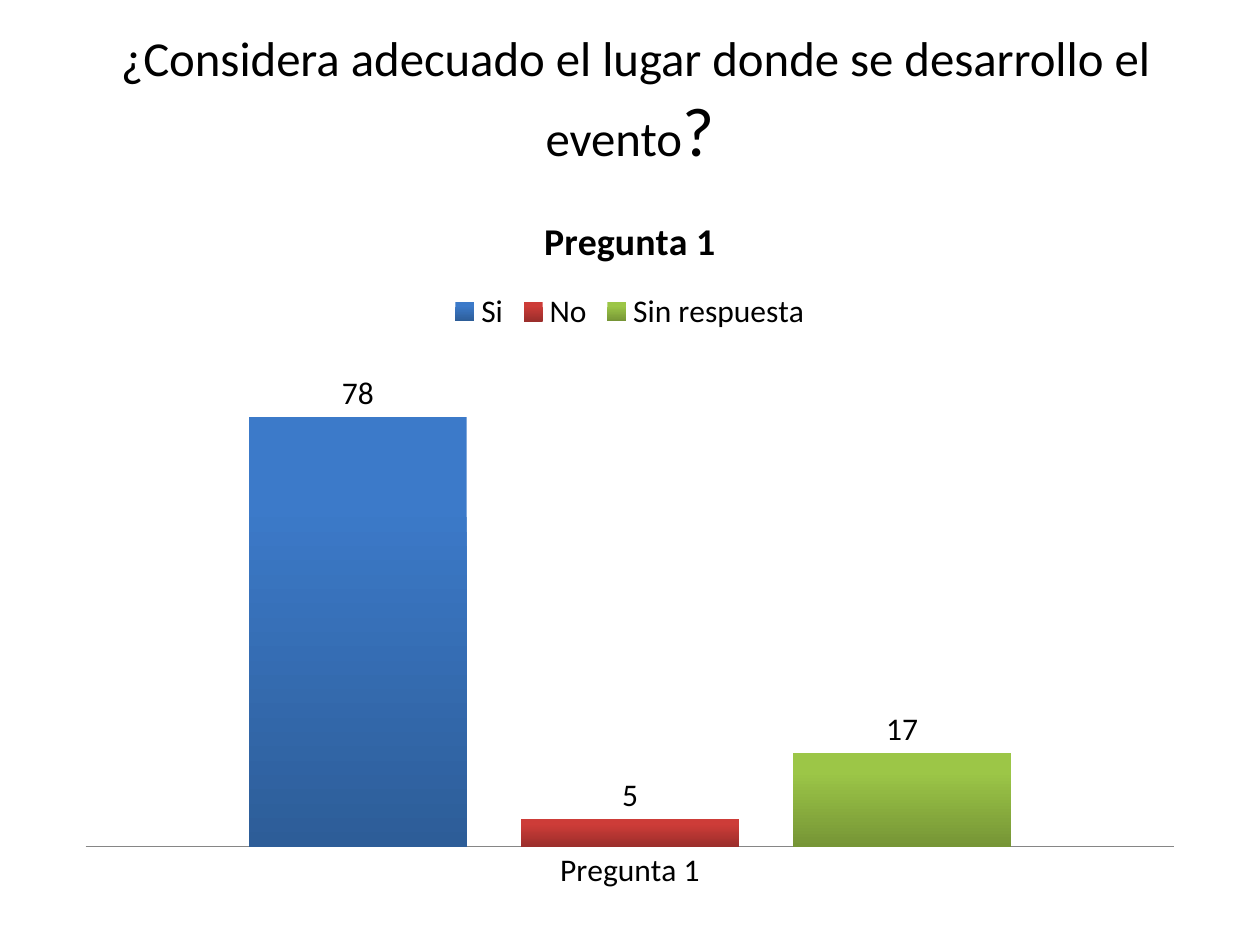
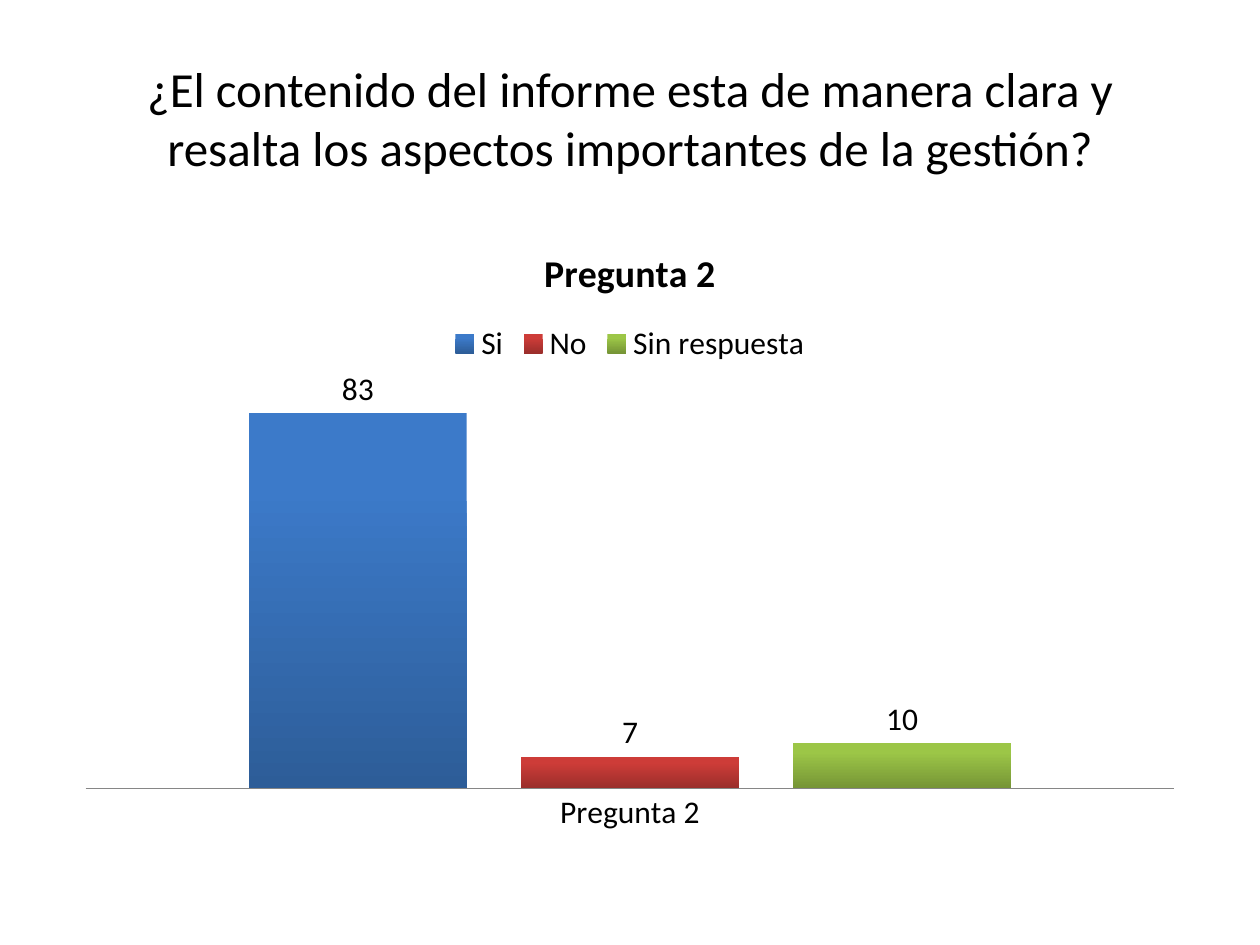
import dataclasses

import pptx
import pptx.chart.data
import pptx.dml.color
import pptx.enum.chart
import pptx.enum.text
import pptx.util

SCALE = 914400 / 126  # EMU in one px
FONT = "Calibri"
BLACK = "000000"
GREY = "868686"
LEFT, WIDE, TALL = 63, 1134, 158  # shared column and title height


@dataclasses.dataclass(frozen=True)
class Answer:
    name: str
    light: str
    dark: str


@dataclasses.dataclass(frozen=True)
class Survey:
    runs: tuple[tuple[str, float], ...]  # title text and size
    head: int  # title top
    top: int  # chart top
    high: int  # chart height
    label: str
    votes: tuple[int, ...]


ANSWERS = (
    Answer("Si", "3C7AC9", "2D5D98"),
    Answer("No", "CD3C38", "9B2E2B"),
    Answer("Sin respuesta", "9CC647", "769536"),
)
SURVEYS = (
    Survey(((" ¿Considera adecuado el lugar donde se desarrollo el evento", 27.9),
            ("?", 39.6)), 20, 186, 718, "Pregunta 1", (78, 5, 17)),
    Survey((("¿El contenido del informe esta de manera clara y resalta "
             "los aspectos importantes de la gestión?", 28),),
           38, 220, 624, "Pregunta 2", (83, 7, 10)),
)


def px(num: int) -> int:
    return pptx.util.Emu(round(num * SCALE))


def paint(tint: str) -> pptx.dml.color.RGBColor:
    return pptx.dml.color.RGBColor.from_string(tint)


def style(font, size: float, bold: bool = False, tint: str = BLACK) -> None:
    font.name = FONT
    font.size = pptx.util.Pt(size)
    font.bold = bold
    font.color.rgb = paint(tint)


def write(para, text: str, **form) -> None:
    run = para.add_run()
    run.text = text
    style(run.font, **form)


def add_title(slide, item: Survey) -> None:
    box = slide.shapes.add_textbox(px(LEFT), px(item.head), px(WIDE), px(TALL))
    frame = box.text_frame
    frame.word_wrap = True
    frame.vertical_anchor = pptx.enum.text.MSO_ANCHOR.MIDDLE
    para = frame.paragraphs[0]
    para.alignment = pptx.enum.text.PP_ALIGN.CENTER
    for text, size in item.runs:
        write(para, text, size=size)


def shade(fill, answer: Answer) -> None:
    """Light at the top, dark at the foot."""
    fill.gradient()
    fill.gradient_angle = 270
    stops = zip(fill.gradient_stops, (answer.light, answer.dark), (0.2, 1))
    for stop, tint, place in stops:
        stop.color.rgb = paint(tint)
        stop.position = place


def add_chart(slide, item: Survey) -> None:
    data = pptx.chart.data.CategoryChartData()
    data.categories = [item.label]
    for answer, vote in zip(ANSWERS, item.votes):
        data.add_series(answer.name, [vote])
    chart = slide.shapes.add_chart(
        pptx.enum.chart.XL_CHART_TYPE.COLUMN_CLUSTERED,
        px(LEFT), px(item.top), px(WIDE), px(item.high), data).chart
    style(chart.font, 18)

    # Heading and legend
    chart.has_title = True
    write(chart.chart_title.text_frame.paragraphs[0], item.label,
          size=21.6, bold=True)
    chart.has_legend = True
    chart.legend.position = pptx.enum.chart.XL_LEGEND_POSITION.TOP
    chart.legend.include_in_layout = False

    # Axes
    chart.value_axis.visible = False
    chart.value_axis.has_major_gridlines = False
    axis = chart.category_axis
    axis.major_tick_mark = pptx.enum.chart.XL_TICK_MARK.NONE
    axis.format.line.color.rgb = paint(GREY)

    # Bars and their values
    plot = chart.plots[0]
    plot.vary_by_categories = False
    plot.gap_width = 150
    plot.overlap = -25
    for series, answer in zip(plot.series, ANSWERS):
        shade(series.format.fill, answer)
        labels = series.data_labels
        labels.show_value = True
        labels.position = pptx.enum.chart.XL_LABEL_POSITION.OUTSIDE_END


def main() -> None:
    deck = pptx.Presentation()
    deck.slide_width, deck.slide_height = px(1260), px(945)
    for item in SURVEYS:
        slide = deck.slides.add_slide(deck.slide_layouts[6])
        add_title(slide, item)
        add_chart(slide, item)
    deck.save("out.pptx")


if __name__ == "__main__":
    main()
